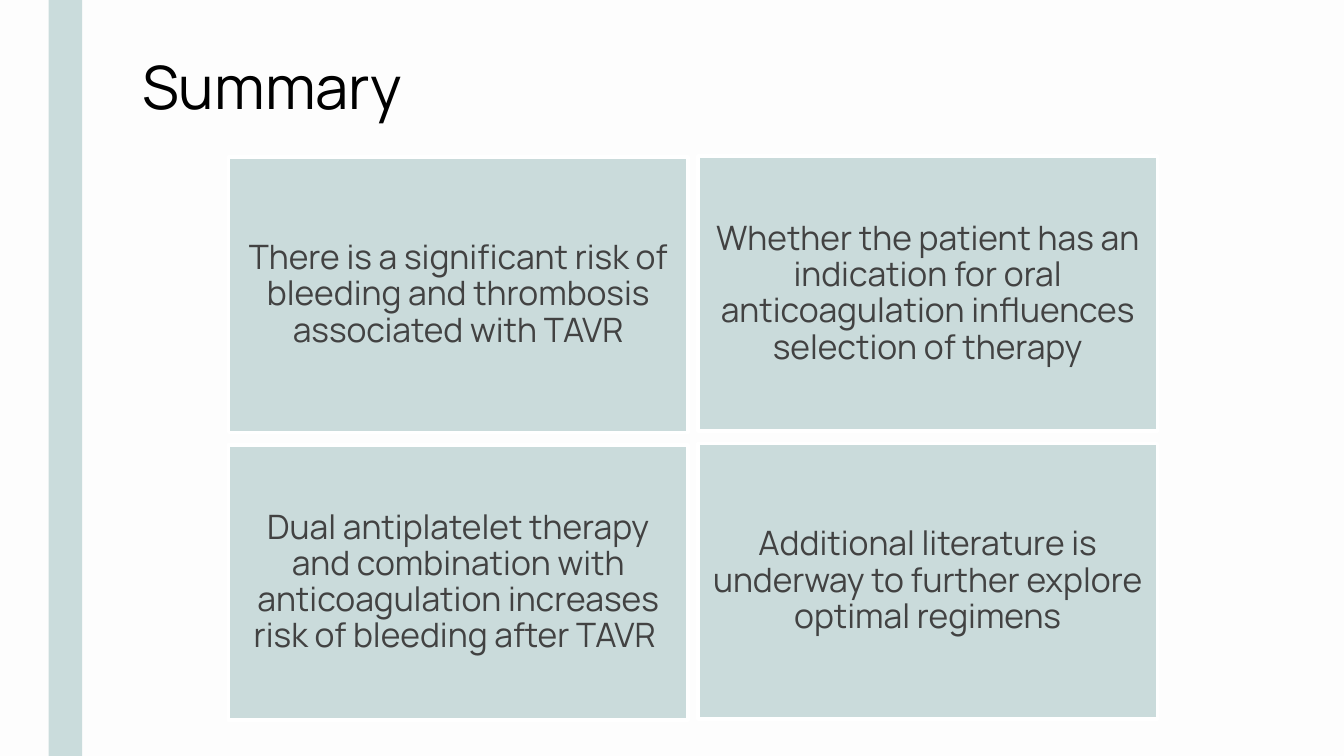
from dataclasses import dataclass

from pptx import Presentation
from pptx.dml.color import RGBColor
from pptx.enum.shapes import MSO_SHAPE
from pptx.enum.text import MSO_ANCHOR, PP_ALIGN
from pptx.util import Pt

FONT = "Manrope"
COLORS = {
    "background": "FDFDFD",
    "stripe": "CADCDC",
    "card": "CADBDB",
    "border": "FFFFFF",
    "title": "000000",
    "body": "424242",
}
CARD_LEFT, CARD_TOP = 122.4, 84.2
CARD_WIDTH, CARD_HEIGHT = 246.2, 147.6
COLUMN_STEP, ROW_STEP = 251.5, 154.1
RIGHT_COLUMN_RISE = 0.7
CARD_INSET = 5


@dataclass
class Card:
    column: int
    row: int
    text: str


CARDS = [
    Card(0, 0, "There is a significant risk of bleeding and thrombosis associated with TAVR"),
    Card(1, 0, "Whether the patient has an indication for oral anticoagulation influences selection of therapy"),
    Card(0, 1, "Dual antiplatelet therapy and combination with anticoagulation increases risk of bleeding after TAVR "),
    Card(1, 1, "Additional literature is underway to further explore optimal regimens"),
]


def color(name: str) -> RGBColor:
    return RGBColor.from_string(COLORS[name])


def add_rect(s, left: float, top: float, width: float, height: float, fill: str):
    sp = s.shapes.add_shape(MSO_SHAPE.RECTANGLE, Pt(left), Pt(top), Pt(width), Pt(height))
    sp.shadow.inherit = False
    sp.fill.solid()
    sp.fill.fore_color.rgb = color(fill)
    sp.line.fill.background()
    return sp


def write(tf, text: str, size: float, ink: str):
    tf.word_wrap = True
    tf.text = text
    p = tf.paragraphs[0]
    r = p.runs[0]
    r.font.name = FONT
    r.font.size = Pt(size)
    r.font.color.rgb = color(ink)
    return p


def add_title(s, text: str) -> None:
    sp = s.shapes.add_textbox(Pt(69.1), Pt(23), Pt(508.3), Pt(46.1))
    write(sp.text_frame, text, 32, "title")


def add_card(s, card: Card) -> None:
    left = CARD_LEFT + card.column * COLUMN_STEP
    top = CARD_TOP + card.row * ROW_STEP - card.column * RIGHT_COLUMN_RISE
    sp = add_rect(s, left, top, CARD_WIDTH, CARD_HEIGHT, "card")
    sp.line.color.rgb = color("border")
    sp.line.width = Pt(2)
    tf = sp.text_frame
    tf.vertical_anchor = MSO_ANCHOR.MIDDLE
    tf.margin_left = tf.margin_right = Pt(CARD_INSET)
    tf.margin_top = tf.margin_bottom = Pt(CARD_INSET)
    p = write(tf, card.text, 18, "body")
    p.alignment = PP_ALIGN.CENTER
    p.line_spacing = 0.9


def main() -> None:
    prs = Presentation()
    prs.slide_width, prs.slide_height = Pt(720), Pt(405)
    s = prs.slides.add_slide(prs.slide_layouts[6])
    s.background.fill.solid()
    s.background.fill.fore_color.rgb = color("background")
    add_rect(s, 26, -3.6, 18, 412.6, "stripe")
    add_title(s, "Summary")
    for card in CARDS:
        add_card(s, card)
    prs.save("out.pptx")


if __name__ == "__main__":
    main()
